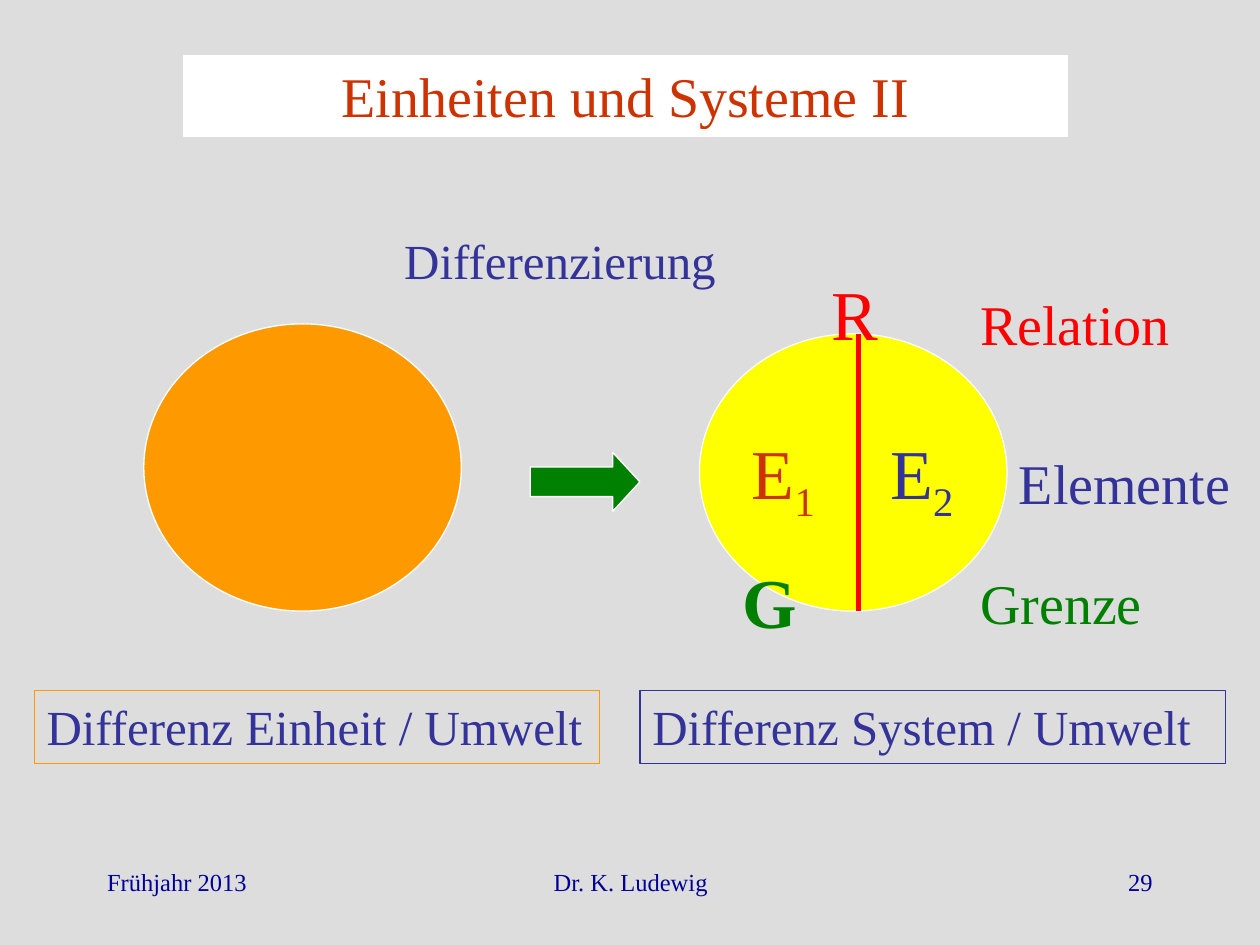
from dataclasses import dataclass

from lxml import etree
from pptx import Presentation
from pptx.dml.color import RGBColor
from pptx.enum.shapes import MSO_CONNECTOR, MSO_SHAPE
from pptx.enum.text import MSO_ANCHOR, MSO_AUTO_SIZE, PP_ALIGN
from pptx.oxml.ns import qn
from pptx.util import Cm, Pt

LEFT, CENTER, RIGHT = PP_ALIGN.LEFT, PP_ALIGN.CENTER, PP_ALIGN.RIGHT
ELLIPSE, ARROW = MSO_SHAPE.OVAL, MSO_SHAPE.RIGHT_ARROW
STRAIGHT = MSO_CONNECTOR.STRAIGHT
TOP = MSO_ANCHOR.TOP
NO_FIT = MSO_AUTO_SIZE.NONE

GREY = RGBColor(0xDD, 0xDD, 0xDD)
WHITE = RGBColor(0xFF, 0xFF, 0xFF)
NAVY = RGBColor(0x00, 0x00, 0x99)
BLUE = RGBColor(0x33, 0x33, 0x99)
RUST = RGBColor(0xCC, 0x33, 0x00)
RED = RGBColor(0xFF, 0x00, 0x00)
GREEN = RGBColor(0x00, 0x80, 0x00)
ORANGE = RGBColor(0xFF, 0x99, 0x00)
YELLOW = RGBColor(0xFF, 0xFF, 0x00)

FONT = "Times New Roman"
THIN = Pt(0.75)


@dataclass
class Box:
    left: float
    top: float
    width: float
    height: float

    def lengths(self) -> tuple:
        return Cm(self.left), Cm(self.top), Cm(self.width), Cm(self.height)


@dataclass
class Label:
    text: str
    box: Box
    size: int
    color: RGBColor
    align: PP_ALIGN = LEFT
    bold: bool = False
    subscript: str = ""
    border: RGBColor | None = None


@dataclass
class Figure:
    kind: MSO_SHAPE
    box: Box
    fill: RGBColor


FOOTER = [
    Label("Frühjahr 2013", Box(1.91, 17.35, 5.28, 1.27), 14, NAVY),
    Label("Dr. K. Ludewig", Box(8.69, 17.35, 8.05, 1.27), 14, NAVY, CENTER),
    Label("29", Box(18.21, 17.35, 5.28, 1.27), 14, NAVY, RIGHT),
]
TITLE = Label("Einheiten und Systeme II", Box(3.71, 1.12, 17.81, 1.63), 32, RUST, CENTER)
FIGURES = [
    Figure(ELLIPSE, Box(2.9, 6.53, 6.4, 5.79), ORANGE),
    Figure(ELLIPSE, Box(14.1, 6.73, 6.2, 5.59), YELLOW),
    Figure(ARROW, Box(10.69, 9.12, 2.21, 1.19), GREEN),
]
LABELS = [
    Label("Differenzierung", Box(7.9, 4.52, 7.21, 1.45), 28, BLUE),
    Label("E", Box(14.91, 8.53, 2.01, 1.96), 40, RUST, subscript="1"),
    Label("E", Box(17.7, 8.53, 2.01, 1.96), 40, BLUE, subscript="2"),
    Label("R", Box(16.51, 5.33, 1.19, 1.96), 40, RED),
    Label("G", Box(14.71, 11.13, 1.6, 1.96), 40, GREEN, bold=True),
    Label("Relation", Box(19.51, 5.72, 4.39, 1.6), 32, RED),
    Label("Elemente", Box(20.29, 8.92, 5.11, 1.6), 32, BLUE),
    Label("Grenze", Box(19.51, 11.33, 3.99, 1.6), 32, GREEN),
    Label("Differenz Einheit / Umwelt", Box(0.69, 13.92, 11.4, 1.47), 28, BLUE, border=ORANGE),
    Label("Differenz System / Umwelt", Box(12.9, 13.92, 11.81, 1.47), 28, BLUE, border=BLUE),
]


def write(tf, label: Label) -> None:
    tf.word_wrap = True
    tf.auto_size = NO_FIT
    tf.vertical_anchor = TOP
    p = tf.paragraphs[0]
    p.alignment = label.align
    p.font.name = FONT
    p.font.size = Pt(label.size)
    p.font.bold = label.bold
    p.font.color.rgb = label.color
    p.add_run().text = label.text
    if label.subscript:
        r = p.add_run()
        r.text = label.subscript
        r.font._element.set("baseline", "-25000")


def outline(sp, color: RGBColor) -> None:
    sp.line.color.rgb = color
    sp.line.width = THIN


def add_title(s, label: Label) -> None:
    sp = s.shapes.title
    sp.left, sp.top, sp.width, sp.height = label.box.lengths()
    sp.fill.solid()
    sp.fill.fore_color.rgb = WHITE
    outline(sp, WHITE)
    write(sp.text_frame, label)


def add_label(s, label: Label) -> None:
    sp = s.shapes.add_textbox(*label.box.lengths())
    if label.border is not None:
        outline(sp, label.border)
    write(sp.text_frame, label)


def add_figure(s, figure: Figure) -> None:
    sp = s.shapes.add_shape(figure.kind, *figure.box.lengths())
    sp.shadow.inherit = False
    sp.fill.solid()
    sp.fill.fore_color.rgb = figure.fill
    outline(sp, WHITE)
    if figure.kind == ARROW:
        sp.adjustments[1] = 0.46


def add_relation(s, x: float, top: float, bottom: float) -> None:
    line = s.shapes.add_connector(STRAIGHT, Cm(x), Cm(top), Cm(x), Cm(bottom))
    line.line.color.rgb = RED
    line.line.width = Pt(3)
    etree.SubElement(line._element.spPr, qn("a:effectLst"))


def main() -> None:
    prs = Presentation()
    prs.slide_width, prs.slide_height = Cm(25.4), Cm(19.05)
    s = prs.slides.add_slide(prs.slide_layouts[5])
    s.background.fill.solid()
    s.background.fill.fore_color.rgb = GREY
    add_title(s, TITLE)
    for figure in FIGURES:
        add_figure(s, figure)
    system = FIGURES[1].box
    add_relation(s, 17.3, system.top, system.top + system.height)
    for label in LABELS + FOOTER:
        add_label(s, label)
    prs.save("out.pptx")


if __name__ == "__main__":
    main()
